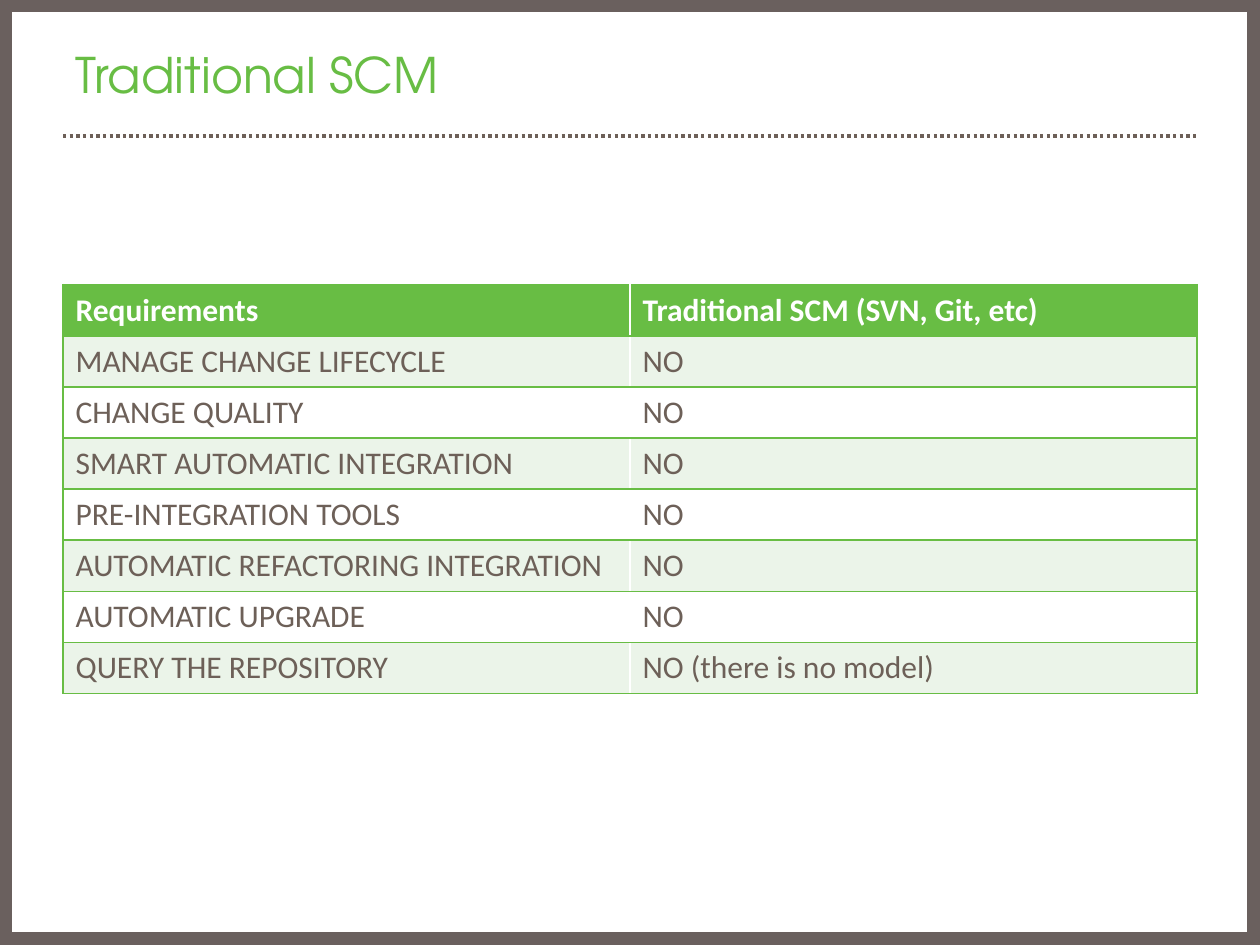
from lxml import etree
from pptx import Presentation
from pptx.dml.color import RGBColor
from pptx.enum import dml, shapes, text
from pptx.oxml import ns
from pptx.util import Pt

TITLE = "Traditional SCM"
ROWS = [
    ("Requirements", "Traditional SCM (SVN, Git, etc)"),
    ("MANAGE CHANGE LIFECYCLE", "NO"),
    ("CHANGE QUALITY", "NO"),
    ("SMART AUTOMATIC INTEGRATION", "NO"),
    ("PRE-INTEGRATION TOOLS", "NO"),
    ("AUTOMATIC REFACTORING INTEGRATION", "NO"),
    ("AUTOMATIC UPGRADE", "NO"),
    ("QUERY THE REPOSITORY", "NO (there is no model)"),
]
GREEN, PALE, WHITE = "68BD44", "EBF4E9", "FFFFFF"
BROWN, FRAME = "6D6058", "6A605E"
WIDE, HIGH = 720, 540
LEFT, SPAN = 36, 648
TOP, ROW = 162.72, 29.2


def color(code):
    return RGBColor.from_string(code)


def write(frame, words, font, size, code, bold=False):
    run = frame.paragraphs[0].add_run()
    run.text = words
    run.font.name, run.font.size, run.font.bold = font, Pt(size), bold
    run.font.color.rgb = color(code)


def edge(cell, sides):
    """Draw a thin green border on the given sides, in L, R, T, B order."""
    props = cell._tc.get_or_add_tcPr()
    for side in sides:
        line = etree.SubElement(props, ns.qn(f"a:ln{side}"), w=str(Pt(1)))
        fill = etree.SubElement(line, ns.qn("a:solidFill"))
        etree.SubElement(fill, ns.qn("a:srgbClr"), val=GREEN)


deck = Presentation()
deck.slide_width, deck.slide_height = Pt(WIDE), Pt(HIGH)
slide = deck.slides.add_slide(deck.slide_layouts[5])
slide.background.fill.solid()
slide.background.fill.fore_color.rgb = color(WHITE)

frame = slide.shapes.add_shape(
    shapes.MSO_SHAPE.RECTANGLE, 0, 0, Pt(WIDE), Pt(HIGH))
frame.shadow.inherit = False
frame.fill.background()
frame.line.color.rgb = color(FRAME)
frame.line.width = Pt(14.25)

rule = slide.shapes.add_connector(
    shapes.MSO_CONNECTOR.STRAIGHT, Pt(LEFT), Pt(77.76), Pt(LEFT + SPAN), Pt(77.76))
rule.line.color.rgb = color(BROWN)
rule.line.width = Pt(1.9)
rule.line.dash_style = dml.MSO_LINE.ROUND_DOT
etree.SubElement(rule._element.spPr, ns.qn("a:effectLst"))

title = slide.shapes.title
title.left, title.top, title.width, title.height = Pt(LEFT), Pt(21.6), Pt(SPAN), Pt(90)
title.text_frame.vertical_anchor = text.MSO_ANCHOR.TOP
title.text_frame.paragraphs[0].alignment = text.PP_ALIGN.LEFT
write(title.text_frame, TITLE, "TeX Gyre Adventor", 28, GREEN)

grid = slide.shapes.add_table(
    len(ROWS), 2, Pt(LEFT), Pt(TOP), Pt(SPAN), Pt(ROW * len(ROWS))).table
for r, row in enumerate(ROWS):
    grid.rows[r].height = Pt(ROW)
    head = r == 0
    shade = GREEN if head else PALE if r % 2 else WHITE
    for c, words in enumerate(row):
        cell = grid.cell(r, c)
        edge(cell, "RTB" if c else "LTB")
        cell.fill.solid()
        cell.fill.fore_color.rgb = color(shade)
        write(cell.text_frame, words, "Calibri", 18, WHITE if head else BROWN, head)

deck.save("out.pptx")
